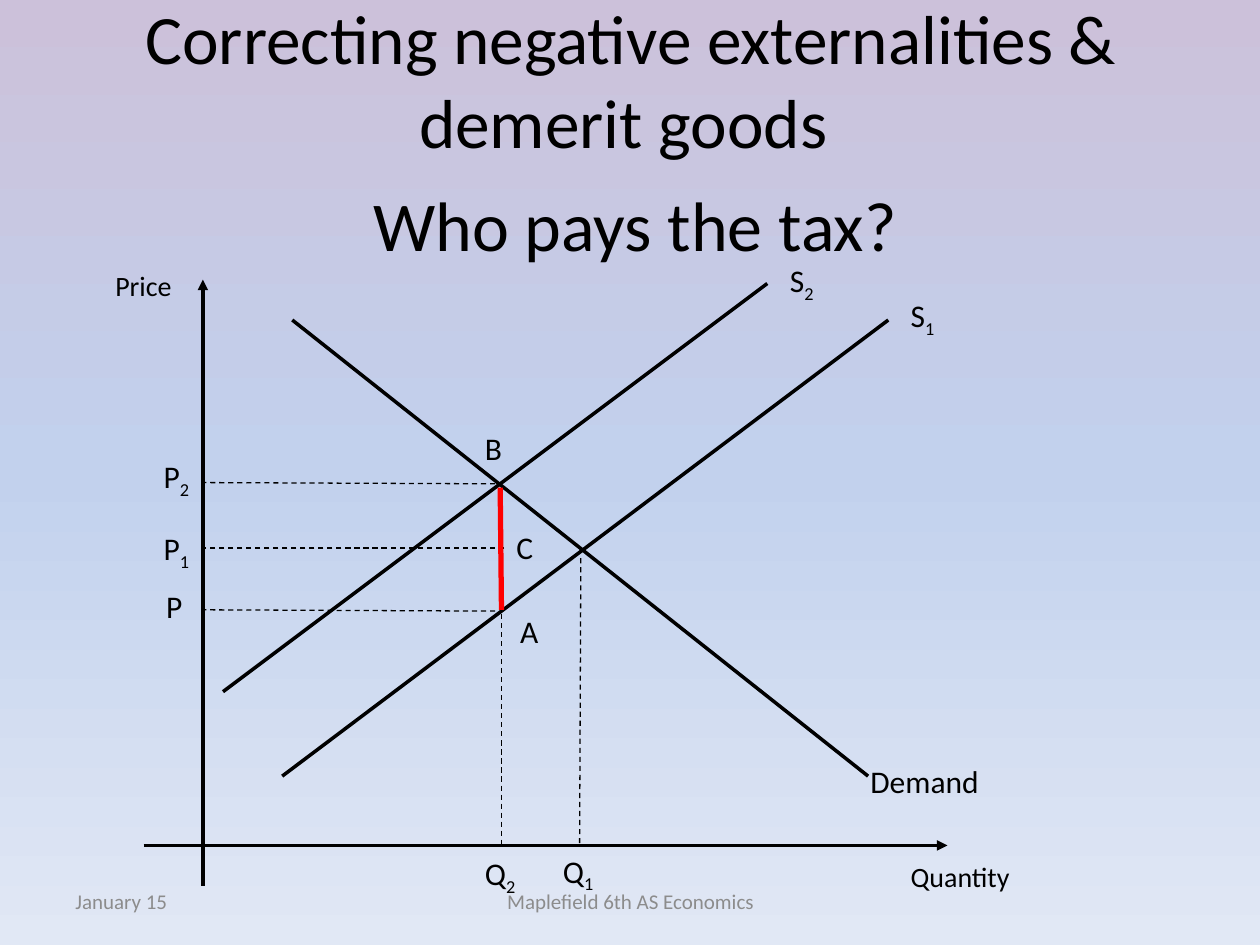
import copy

import pptx
import pptx.dml.color
import pptx.enum.dml
import pptx.enum.shapes
import pptx.enum.text
import pptx.oxml
import pptx.oxml.ns
import pptx.util

ALIGN = pptx.enum.text.PP_ALIGN
ANCHOR = pptx.enum.text.MSO_ANCHOR
COLUMNS, ROWS = 100, 75
BLACK, GRAY, RED = "000000", "8C8C8C", "FF0000"


def color(value):
    return pptx.dml.color.RGBColor.from_string(value)


def apply(target, values):
    for name, value in values.items():
        setattr(target, name, value)


class Diagram:
    font = "Calibri"

    def __init__(self, presentation):
        self.slide = presentation.slides.add_slide(presentation.slide_layouts[6])
        self.column = presentation.slide_width / COLUMNS
        self.row = presentation.slide_height / ROWS

    def place(self, column, row):
        return round(column * self.column), round(row * self.row)

    def background(self, stops):
        fill = self.slide.background.fill
        fill.gradient()
        fill.gradient_angle = 270
        stop_list = self.slide.element.find(".//" + pptx.oxml.ns.qn("a:gsLst"))
        stop_list.insert(1, copy.deepcopy(stop_list[0]))
        for stop, (position, value) in zip(fill.gradient_stops, stops):
            stop.position = position
            stop.color.rgb = color(value)

    def text(self, content, box, size=18, tint=BLACK, align=ALIGN.LEFT,
             anchor=ANCHOR.TOP, wrap=True):
        shape = self.slide.shapes.add_textbox(*self.place(*box[:2]), *self.place(*box[2:]))
        apply(shape.text_frame, {"word_wrap": wrap, "vertical_anchor": anchor})
        paragraph = shape.text_frame.paragraphs[0]
        paragraph.alignment = align
        for index, part in enumerate(content.split("_")):
            run = paragraph.add_run()
            run.text = part
            apply(run.font, {"name": self.font, "size": pptx.util.Pt(size)})
            run.font.color.rgb = color(tint)
            if index:
                run.font._element.set("baseline", "-25000")

    def label(self, content, column, row, width):
        self.text(content, (column, row, width, 4), wrap=False)

    def line(self, start, end, width=2, tint=BLACK, dash=None, arrow=False):
        connector = self.slide.shapes.add_connector(
            pptx.enum.shapes.MSO_CONNECTOR.STRAIGHT, *self.place(*start), *self.place(*end))
        apply(connector.line, {"width": pptx.util.Pt(width), "dash_style": dash})
        connector.line.color.rgb = color(tint)
        if arrow:
            outline = connector.line._get_or_add_ln()
            tail = pptx.oxml.ns.qn("a:tailEnd")
            outline.append(outline.makeelement(tail, {"type": "triangle"}))
        properties = connector._element.spPr
        properties.append(properties.makeelement(pptx.oxml.ns.qn("a:effectLst"), {}))

    def guide(self, start, end):
        self.line(start, end, width=0.75, dash=pptx.enum.dml.MSO_LINE.DASH)


def main():
    presentation = pptx.Presentation()
    apply(presentation, {"slide_width": pptx.util.Inches(10),
                         "slide_height": pptx.util.Inches(7.5)})
    diagram = Diagram(presentation)
    diagram.background([(0, "CCC1DA"), (0.5, "C2D1ED"), (1, "E1E8F5")])

    diagram.text("Correcting negative externalities & demerit goods ", (5.1, 0, 90, 12.5),
                 size=39.6, align=ALIGN.CENTER, anchor=ANCHOR.MIDDLE)
    diagram.text("Who pays the tax?", (5.1, 13.9, 90.6, 55.1), size=40, align=ALIGN.CENTER)
    footer = {"size": 12, "tint": GRAY, "anchor": ANCHOR.MIDDLE}
    diagram.text("January 15", (5, 69.5, 23.3, 4), **footer)
    diagram.text("Maplefield 6th AS Economics", (34.2, 69.5, 31.7, 4),
                 align=ALIGN.CENTER, **footer)

    price_axis, quantity_axis = 16.1, 67.1
    diagram.line((price_axis, 70.3), (price_axis, 22.2), arrow=True)
    diagram.line((11.4, quantity_axis), (75.2, quantity_axis), arrow=True)
    diagram.text("Price", (2.8, 20.8, 11.8, 3.7), size=16, align=ALIGN.RIGHT)
    diagram.text("Quantity", (71.3, 67.7, 15, 3.7), size=16)

    supply_1 = (22.4, 61.6), (70.5, 25.4)
    supply_2 = (17.7, 54.9), (60.9, 22.5)
    demand = (23.2, 25.4), (68.9, 61.6)
    for curve in (supply_1, supply_2, demand):
        diagram.line(*curve)

    for price, column, row in ((38.3, 39.3, 38.4), (43.5, 40, 43.5), (48.4, 39.3, 48.5)):
        diagram.guide((column, row), (price_axis, price))
    for quantity, column, row in ((39.8, 39.8, 38.7), (46, 46.1, 44.3)):
        diagram.guide((column, row), (quantity, quantity_axis))
    diagram.line((39.7, 38.7), (39.8, 48.4), width=3, tint=RED)

    for label in (
        ("S_1", 71.3, 23, 4),
        ("S_2", 61.7, 20.2, 4),
        ("Demand", 68.1, 60, 10.7),
        ("P_2", 12, 35.8, 4.2),
        ("P_1", 12, 41.5, 4.2),
        ("P", 12.2, 46.1, 3.3),
        ("Q_1", 43.7, 67.1, 4.6),
        ("Q_2", 37.5, 67.3, 4.6),
        ("A", 40.3, 48.1, 3.5),
        ("B", 37.5, 33.6, 3.4),
        ("C", 40, 41.4, 3.4),
    ):
        diagram.label(*label)

    presentation.save("out.pptx")


if __name__ == "__main__":
    main()
